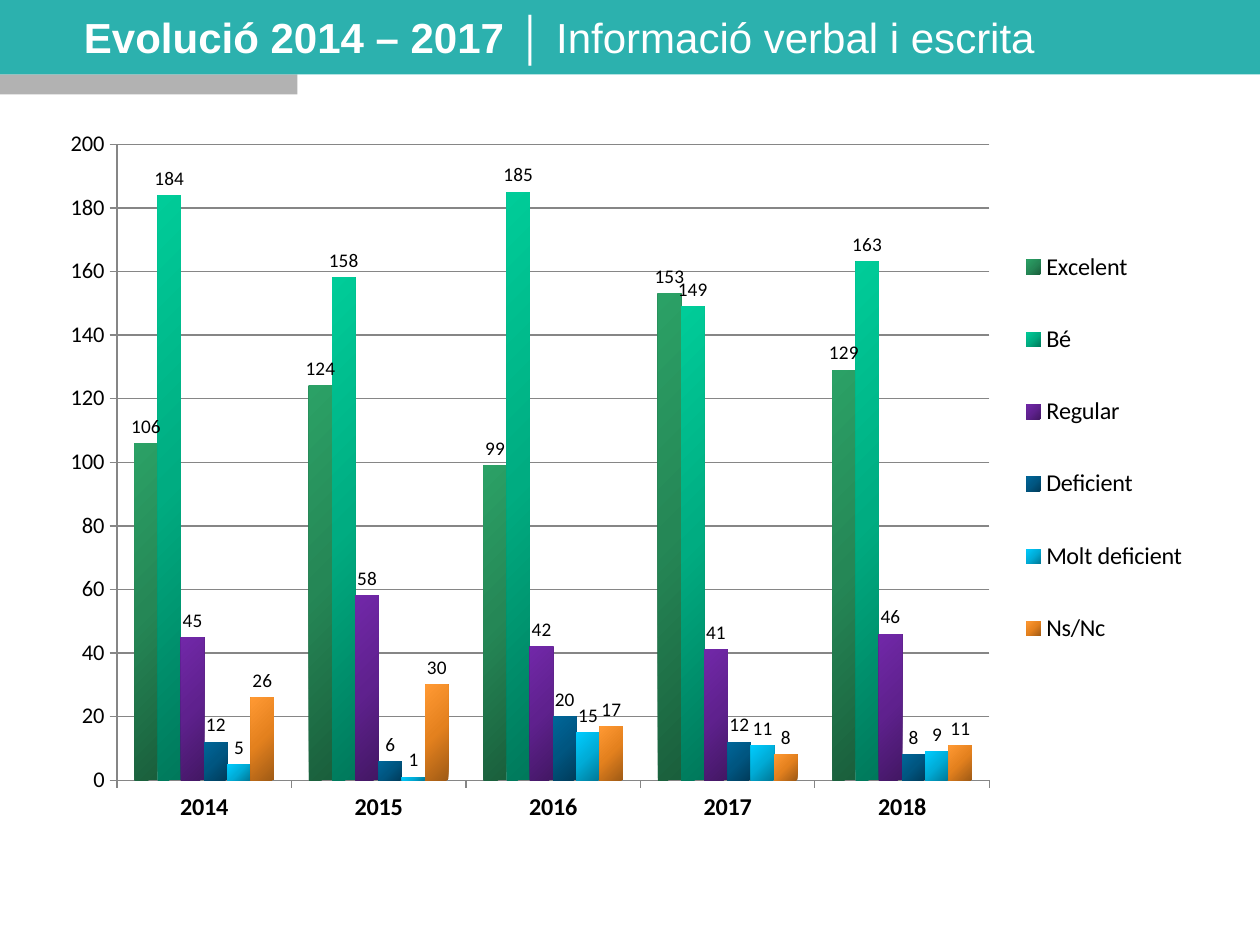
"""Build a slide charting five years of ratings for verbal and written information."""
from dataclasses import dataclass

from pptx import Presentation
from pptx import oxml
from pptx import util as u
from pptx.chart.data import CategoryChartData
from pptx.dml.color import RGBColor
from pptx.enum import chart as ch, shapes, text
from pptx.oxml import ns


@dataclass(frozen=True)
class Theme:
    band: str = "2CB1AE"
    accent: str = "B2B2B2"
    light: str = "FFFFFF"
    dark: str = "000000"
    grid: str = "868686"
    title_font: str = "Arial"
    divider_font: str = "Times New Roman"
    chart_font: str = "Calibri"
    title_size: float = 24
    category_size: float = 13.8
    value_size: float = 12.8
    label_size: float = 11


THEME = Theme()
YEARS = ["2014", "2015", "2016", "2017", "2018"]
RATINGS = [
    ("Excelent", (106, 124, 99, 153, 129), ("1A5F3C", "258756", "2BA166")),
    ("Bé", (184, 158, 185, 149, 163), ("00795B", "00AC81", "00CC99")),
    ("Regular", (45, 58, 42, 41, 46), ("431764", "5F218E", "7128A8")),
    ("Deficient", (12, 6, 20, 12, 8), ("003C5B", "005681", "006699")),
    ("Molt deficient", (5, 1, 15, 11, 9), ("007997", "00ACD7", "00CCFF")),
    ("Ns/Nc", (26, 30, 17, 8, 11), ("A05B15", "E4811E", "FF9933")),
]


def points(*values):
    return [u.Pt(v) for v in values]


def style_font(font, name, size, color, bold=False):
    font.name, font.size, font.bold = name, u.Pt(size), bold
    font.color.rgb = RGBColor.from_string(color)


def add_band(s, box, color):
    sp = s.shapes.add_shape(shapes.MSO_SHAPE.RECTANGLE, *points(*box))
    sp.shadow.inherit = False
    sp.fill.solid()
    sp.fill.fore_color.rgb = RGBColor.from_string(color)
    sp.line.fill.background()


def set_title(s, box, runs):
    sp = s.shapes.title
    sp.left, sp.top, sp.width, sp.height = points(*box)
    sp.element.getparent().append(sp.element)
    tf = sp.text_frame
    tf.margin_left = tf.margin_right = tf.margin_top = tf.margin_bottom = 0
    tf.vertical_anchor = text.MSO_ANCHOR.MIDDLE
    tf.word_wrap = True
    tf.auto_size = text.MSO_AUTO_SIZE.NONE
    p = tf.paragraphs[0]
    p.alignment = text.PP_ALIGN.LEFT
    for words, font, bold in runs:
        r = p.add_run()
        r.text = words
        style_font(r.font, font, THEME.title_size, THEME.light, bold)


def set_gradient(series, colors):
    stops = "".join(
        f'<a:gs pos="{i * 50000}"><a:srgbClr val="{c}"/></a:gs>'
        for i, c in enumerate(colors))
    series._element.get_or_add_spPr().insert(0, oxml.parse_xml(
        f'<a:gradFill {ns.nsdecls("a")} rotWithShape="1"><a:gsLst>{stops}</a:gsLst>'
        '<a:lin ang="13500000" scaled="1"/></a:gradFill>'))


def set_layout(element, index, x, y, w, h, inner=False):
    for old in element.findall(ns.qn("c:layout")):
        element.remove(old)
    target = '<c:layoutTarget val="inner"/>' if inner else ""
    element.insert(index, oxml.parse_xml(
        f'<c:layout {ns.nsdecls("c")}><c:manualLayout>{target}'
        '<c:xMode val="edge"/><c:yMode val="edge"/>'
        f'<c:x val="{x}"/><c:y val="{y}"/><c:w val="{w}"/><c:h val="{h}"/>'
        '</c:manualLayout></c:layout>'))


def style_axis(axis, size, bold=False):
    axis.major_tick_mark = ch.XL_TICK_MARK.OUTSIDE
    axis.minor_tick_mark = ch.XL_TICK_MARK.NONE
    style_font(axis.tick_labels.font, THEME.chart_font, size, THEME.dark, bold)
    style_line(axis.format.line)


def style_line(line):
    line.width = u.Pt(0.75)
    line.color.rgb = RGBColor.from_string(THEME.grid)


def add_ratings_chart(s, box):
    data = CategoryChartData()
    data.categories = YEARS
    for name, values, _ in RATINGS:
        data.add_series(name, values)
    chart = s.shapes.add_chart(
        ch.XL_CHART_TYPE.COLUMN_CLUSTERED, *points(*box), data).chart
    chart.has_title = False
    style_font(chart.font, THEME.chart_font, THEME.value_size, THEME.dark)

    plot = chart.plots[0]
    plot.vary_by_categories = False
    plot.gap_width, plot.overlap = 150, 0
    for series, (_, _, colors) in zip(plot.series, RATINGS):
        set_gradient(series, colors)
        labels = series.data_labels
        labels.show_value = True
        labels.position = ch.XL_LABEL_POSITION.OUTSIDE_END
        style_font(labels.font, THEME.chart_font, THEME.label_size, THEME.dark)

    style_axis(chart.category_axis, THEME.category_size, bold=True)
    axis = chart.value_axis
    style_axis(axis, THEME.value_size)
    axis.minimum_scale, axis.maximum_scale, axis.major_unit = 0, 200, 20
    axis.has_major_gridlines = True
    style_line(axis.major_gridlines.format.line)

    chart.has_legend = True
    legend = chart.legend
    legend.position = ch.XL_LEGEND_POSITION.RIGHT
    legend.include_in_layout = False
    style_font(legend.font, THEME.chart_font, THEME.category_size, THEME.dark)
    set_layout(legend._element, 1, 0.84, 0.13, 0.16, 0.66)
    plot_area = chart.element.find(".//" + ns.qn("c:plotArea"))
    set_layout(plot_area, 0, 0.06, 0.04, 0.76, 0.88, inner=True)


def main():
    prs = Presentation()
    prs.slide_width, prs.slide_height = points(720, 540)
    s = prs.slides.add_slide(prs.slide_layouts[5])
    add_band(s, (0, 42.5, 170, 11.5), THEME.accent)
    add_band(s, (0, 0, 720, 42.5), THEME.band)
    set_title(s, (48, 0, 660, 42.5), [
        ("Evolució 2014 – 2017 ", THEME.title_font, True),
        ("│ ", THEME.divider_font, True),
        ("Informació verbal i escrita", THEME.title_font, False),
    ])
    add_ratings_chart(s, (27.5, 66, 656, 413))
    prs.save("out.pptx")


if __name__ == "__main__":
    main()
